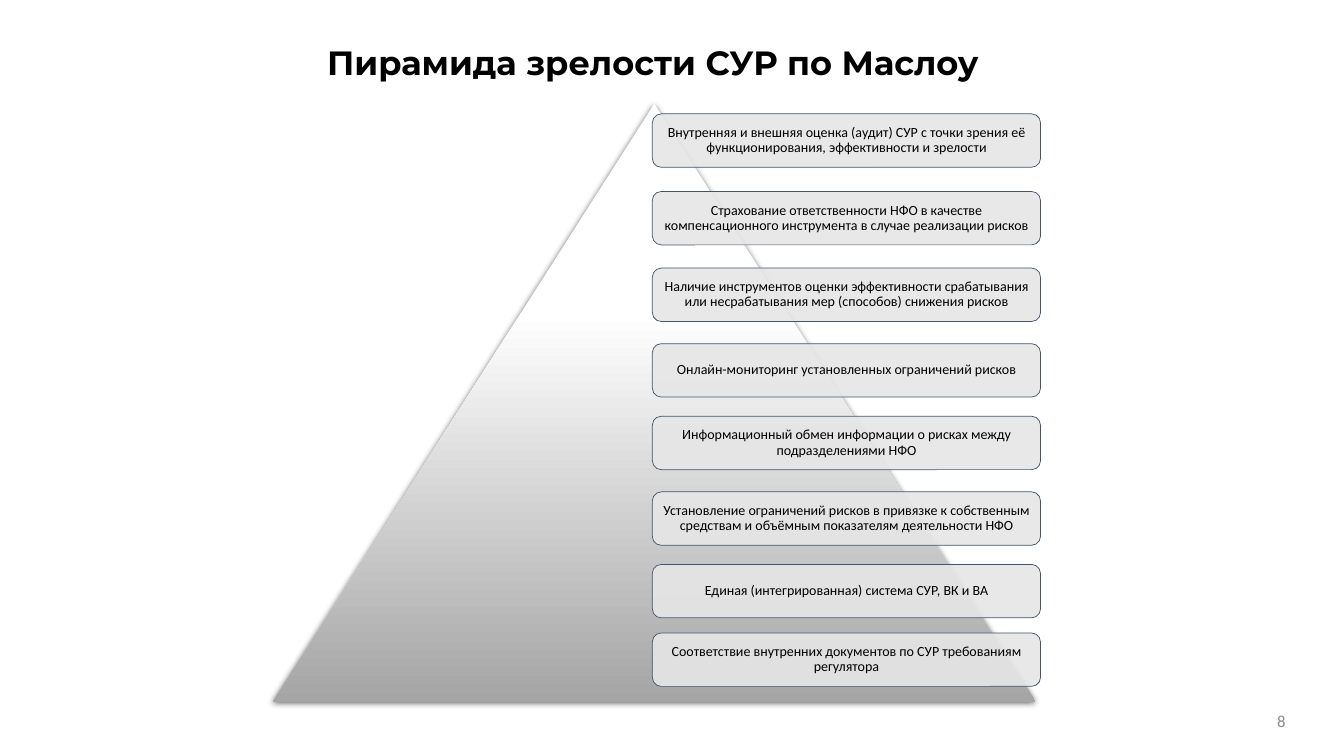
from copy import deepcopy

from lxml.etree import SubElement
from pptx import Presentation
from pptx.dml.color import RGBColor
from pptx.enum.shapes import MSO_SHAPE
from pptx.enum.text import MSO_ANCHOR, PP_ALIGN
from pptx.oxml.ns import qn
from pptx.util import Inches, Pt

# Content
TITLE = "Пирамида зрелости СУР по Маслоу"
PAGE = "8"
LEVELS = [  # top of the box, text
    (1.13, "Внутренняя и внешняя оценка (аудит) СУР с точки зрения её функционирования, эффективности и зрелости"),
    (1.90, "Страхование ответственности НФО в качестве компенсационного инструмента в случае реализации рисков"),
    (2.66, "Наличие инструментов оценки эффективности срабатывания или несрабатывания мер (способов) снижения рисков"),
    (3.41, "Онлайн-мониторинг установленных ограничений рисков"),
    (4.13, "Информационный обмен информации о рисках между подразделениями НФО"),
    (4.88, "Установление ограничений рисков в привязке к собственным средствам и объёмным показателям деятельности НФО"),
    (5.60, "Единая (интегрированная) система СУР, ВК и ВА"),
    (6.28, "Соответствие внутренних документов по СУР требованиям регулятора"),
]


class Theme:
    black = RGBColor(0x00, 0x00, 0x00)
    white = RGBColor(0xFF, 0xFF, 0xFF)
    base = RGBColor(0xA5, 0xA5, 0xA5)
    box = RGBColor(0xE7, 0xE6, 0xE6)
    border = RGBColor(0x44, 0x54, 0x6A)
    page = RGBColor(0x8C, 0x8C, 0x8C)
    head_font, body_font = "Montserrat", "Calibri"
    title_size, level_size, page_size = Pt(24), Pt(10), Pt(12)


def write(sp, text, font, size, color, align, anchor=MSO_ANCHOR.MIDDLE, bold=False):
    tf = sp.text_frame
    tf.word_wrap = True
    tf.vertical_anchor = anchor
    p = tf.paragraphs[0]
    p.alignment = align
    r = p.add_run()
    r.text = text
    r.font.name, r.font.size, r.font.bold = font, size, bold
    r.font.color.rgb = color
    return tf


def add_pyramid(s):
    sp = s.shapes.add_shape(MSO_SHAPE.ISOSCELES_TRIANGLE,
                            Inches(2.71), Inches(1.03), Inches(7.56), Inches(5.93))
    sp.line.fill.background()
    # White down to 35 %, then grey towards the base
    sp.fill.gradient()
    sp.fill.gradient_angle = 270
    first, last = sp.fill.gradient_stops
    first.position, first.color.rgb = 0, Theme.white
    last.position, last.color.rgb = 1, Theme.base
    stops = sp._element.spPr.find(qn("a:gradFill")).find(qn("a:gsLst"))
    middle = deepcopy(stops[0])
    middle.set("pos", "35000")
    stops.insert(1, middle)
    # Soft shadow below
    sp.shadow.inherit = False
    effects = sp._element.spPr.find(qn("a:effectLst"))
    shadow = SubElement(effects, qn("a:outerShdw"), blurRad=str(Pt(4.5)),
                        dist=str(Pt(1.5)), dir="5400000", rotWithShape="0")
    color = SubElement(shadow, qn("a:srgbClr"), val=str(Theme.black))
    SubElement(color, qn("a:alpha"), val="63000")


def add_level(s, top, text):
    sp = s.shapes.add_shape(MSO_SHAPE.ROUNDED_RECTANGLE,
                            Inches(6.47), Inches(top), Inches(3.85), Inches(0.53))
    sp.shadow.inherit = False
    sp.fill.solid()
    sp.fill.fore_color.rgb = Theme.box
    color = sp._element.spPr.find(qn("a:solidFill"))[0]
    SubElement(color, qn("a:alpha"), val="90000")
    sp.line.color.rgb = Theme.border
    sp.line.width = Pt(0.5)
    tf = write(sp, text, Theme.body_font, Theme.level_size, Theme.black, PP_ALIGN.CENTER)
    tf.margin_left = tf.margin_right = tf.margin_top = tf.margin_bottom = Inches(0.04)
    tf.paragraphs[0].line_spacing = 0.9


def main():
    prs = Presentation()
    prs.slide_width, prs.slide_height = Inches(13.33), Inches(7.5)
    s = prs.slides.add_slide(prs.slide_layouts[5])

    # Title
    title = s.shapes.title
    title.left, title.top = Inches(0.96), Inches(0.37)
    title.width, title.height = Inches(11.03), Inches(0.5)
    write(title, TITLE, Theme.head_font, Theme.title_size, Theme.black,
          PP_ALIGN.CENTER, MSO_ANCHOR.TOP, bold=True)

    # Pyramid with its levels
    add_pyramid(s)
    for top, text in LEVELS:
        add_level(s, top, text)

    # Page number
    page = s.shapes.add_textbox(Inches(9.85), Inches(6.95), Inches(3), Inches(0.4))
    write(page, PAGE, Theme.body_font, Theme.page_size, Theme.page, PP_ALIGN.RIGHT)

    prs.save("out.pptx")


if __name__ == "__main__":
    main()
